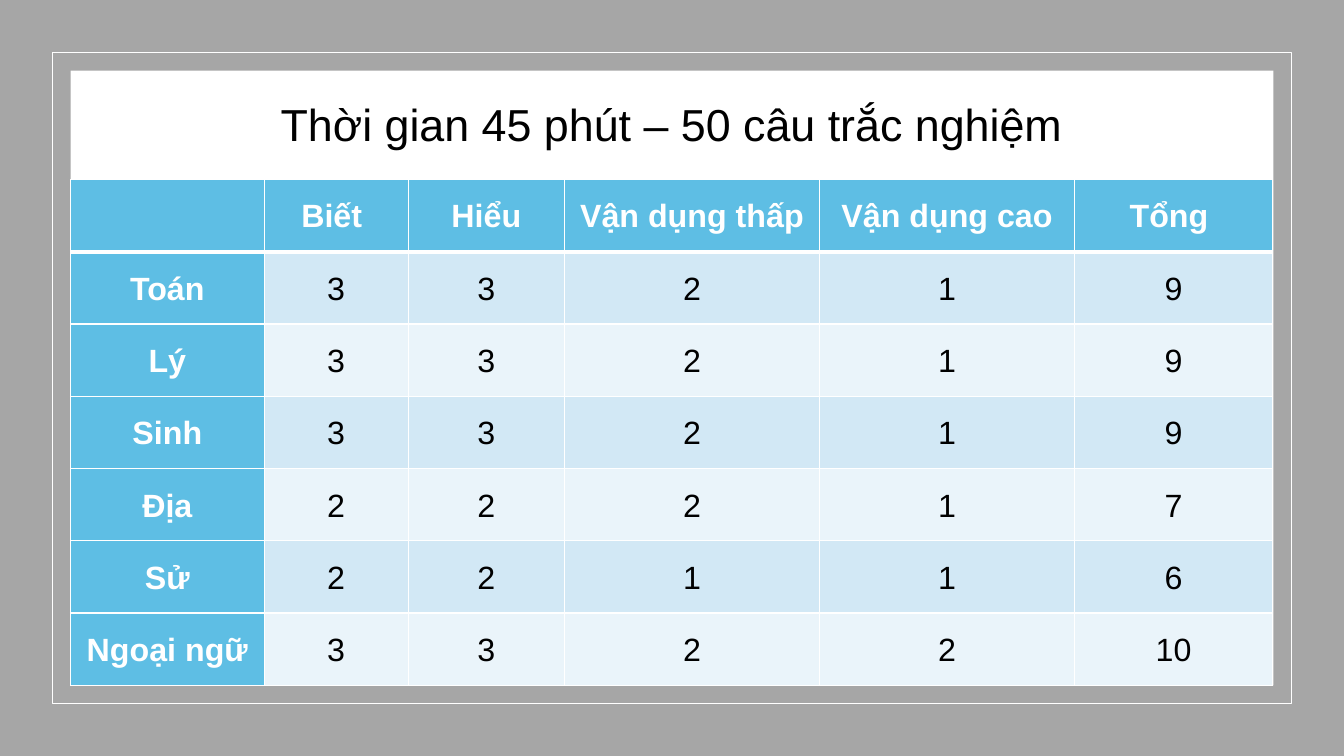
from pptx import Presentation
from pptx.dml.color import RGBColor
from pptx.enum.shapes import MSO_SHAPE
from pptx.enum.text import MSO_ANCHOR, PP_ALIGN
from pptx.oxml.ns import qn
from pptx.util import Inches, Pt
from lxml import etree

RECTANGLE = MSO_SHAPE.RECTANGLE
MIDDLE = MSO_ANCHOR.MIDDLE
CENTER = PP_ALIGN.CENTER
WHITE = RGBColor(0xFF, 0xFF, 0xFF)
BLACK = RGBColor(0x00, 0x00, 0x00)
GRAY = RGBColor(0xA6, 0xA6, 0xA6)
BLUE = RGBColor(0x5E, 0xBE, 0xE4)
BANDS = [RGBColor(0xD2, 0xE8, 0xF5), RGBColor(0xEA, 0xF4, 0xFA)]

SLIDE_WIDTH, SLIDE_HEIGHT = Inches(13.33), Inches(7.5)
FRAME_MARGIN, PANEL_MARGIN = Inches(0.52), Inches(0.7)
TABLE_TOP = Inches(1.78)
ROW_HEIGHT = Inches(5.02 / 7)
COLUMN_WIDTHS = [1.92, 1.43, 1.55, 2.53, 2.53, 1.96]

HEADINGS = ["", "Biết ", "Hiểu", "Vận dụng thấp", "Vận dụng cao", "Tổng "]
QUESTIONS = {
    "Toán": [3, 3, 2, 1],
    "Lý": [3, 3, 2, 1],
    "Sinh": [3, 3, 2, 1],
    "Địa": [2, 2, 2, 1],
    "Sử": [2, 2, 1, 1],
    "Ngoại ngữ": [3, 3, 2, 2],
}
CELL_FORMAT = {
    "margin_left": Inches(0.15),
    "margin_right": Inches(0.15),
    "margin_top": 0,
    "margin_bottom": 0,
    "vertical_anchor": MIDDLE,
}


def write_text(paragraph, text, paragraph_format, font_format):
    paragraph.alignment = CENTER
    for name, value in paragraph_format.items():
        setattr(paragraph, name, value)
    if text:
        run = paragraph.add_run()
        run.text = text
        run.font.color.rgb = font_format["color"]
        run.font.name = "Arial"
        run.font.size = Pt(font_format["size"])
        run.font.bold = font_format["bold"]


def set_borders(cell, bottom_width):
    properties = cell._tc.get_or_add_tcPr()
    widths = {"a:lnL": 1, "a:lnR": 1, "a:lnT": 1, "a:lnB": bottom_width}
    for position, (tag, width) in enumerate(widths.items()):
        line = etree.Element(qn(tag), w=str(Pt(width)))
        fill = etree.SubElement(line, qn("a:solidFill"))
        etree.SubElement(fill, qn("a:srgbClr"), val=str(WHITE))
        properties.insert(position, line)


presentation = Presentation()
presentation.slide_width = SLIDE_WIDTH
presentation.slide_height = SLIDE_HEIGHT
slide = presentation.slides.add_slide(presentation.slide_layouts[6])

for margin, fill_color, line_color in [
    (0, GRAY, None),
    (FRAME_MARGIN, None, WHITE),
    (PANEL_MARGIN, WHITE, None),
]:
    shape = slide.shapes.add_shape(
        RECTANGLE, margin, margin, SLIDE_WIDTH - 2 * margin, SLIDE_HEIGHT - 2 * margin
    )
    shape.shadow.inherit = False
    if fill_color is None:
        shape.fill.background()
    else:
        shape.fill.solid()
        shape.fill.fore_color.rgb = fill_color
    if line_color is None:
        shape.line.fill.background()
    else:
        shape.line.color.rgb = line_color
        shape.line.width = Pt(1)

rows = [HEADINGS]
for subject, counts in QUESTIONS.items():
    rows.append([subject, *counts, sum(counts)])

table = slide.shapes.add_table(
    len(rows), len(HEADINGS), PANEL_MARGIN, TABLE_TOP,
    SLIDE_WIDTH - 2 * PANEL_MARGIN, ROW_HEIGHT * len(rows),
).table
for column, width in zip(table.columns, COLUMN_WIDTHS):
    column.width = Inches(width)

for row_index, values in enumerate(rows):
    table.rows[row_index].height = ROW_HEIGHT
    for column_index, value in enumerate(values):
        cell = table.cell(row_index, column_index)
        heading = row_index == 0 or column_index == 0
        for name, setting in CELL_FORMAT.items():
            setattr(cell, name, setting)
        cell.fill.solid()
        cell.fill.fore_color.rgb = BLUE if heading else BANDS[(row_index - 1) % 2]
        set_borders(cell, 3 if row_index == 0 else 1)
        write_text(
            cell.text_frame.paragraphs[0], str(value), {"line_spacing": 1.07},
            {"size": 23, "color": WHITE if heading else BLACK, "bold": heading},
        )

title = slide.shapes.add_textbox(0, Inches(0.86), SLIDE_WIDTH, Inches(0.79))
title.text_frame.word_wrap = True
title.text_frame.vertical_anchor = MIDDLE
write_text(
    title.text_frame.paragraphs[0], "Thời gian 45 phút – 50 câu trắc nghiệm",
    {"line_spacing": 0.9, "space_before": Pt(10)},
    {"size": 32, "color": BLACK, "bold": False},
)

presentation.save("out.pptx")
